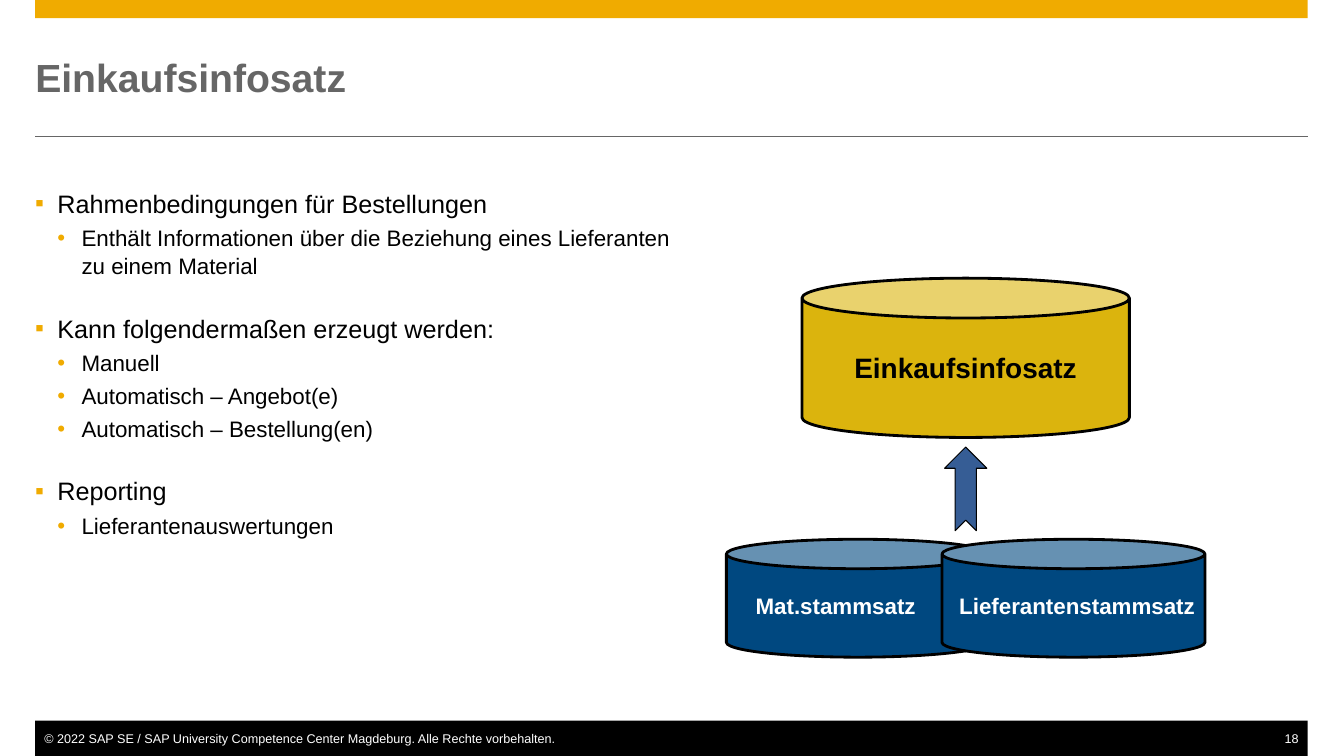
import pptx
import pptx.util
import pptx.dml.color
import pptx.enum.shapes
import pptx.enum.text
import pptx.oxml.ns
import lxml.etree

PX = 9144
GOLD = "F0AB00"
GREY = "666666"
BLUE = "004880"
KIND = pptx.enum.shapes.MSO_SHAPE
ALIGN = pptx.enum.text.PP_ALIGN
MID = pptx.enum.text.MSO_ANCHOR.MIDDLE
TOP = pptx.enum.text.MSO_ANCHOR.TOP

POINTS = [
    ("Rahmenbedingungen für Bestellungen",
     ["Enthält Informationen über die Beziehung eines Lieferanten zu einem Material"]),
    ("Kann folgendermaßen erzeugt werden:",
     ["Manuell", "Automatisch – Angebot(e)", "Automatisch – Bestellung(en)"]),
    ("Reporting", ["Lieferantenauswertungen"]),
]


def px(*nums):
    """Turn pixel lengths into a list of EMU."""
    return [pptx.util.Emu(n * PX) for n in nums]


def color(code):
    """Return the colour of a hex string."""
    return pptx.dml.color.RGBColor.from_string(code)


def child(node, tag, **attrs):
    """Append a drawing element to a node."""
    return lxml.etree.SubElement(node, pptx.oxml.ns.qn(tag), attrs)


def write(para, text, size=16, tint="000000", bold=False, align=ALIGN.LEFT):
    """Add formatted text to a paragraph."""
    para.alignment = align
    run = para.add_run()
    run.text = text
    run.font.name = "Arial"
    run.font.size = pptx.util.Pt(size)
    run.font.bold = bold
    run.font.color.rgb = color(tint)


def frame(shape, inset=(0, 0, 0, 0), anchor=TOP, wrap=True):
    """Set the insets, anchor and wrap of a shape and return its frame."""
    text = shape.text_frame
    text.margin_left, text.margin_top, text.margin_right, text.margin_bottom = px(*inset)
    text.vertical_anchor = anchor
    text.word_wrap = wrap
    return text


def block(slide, kind, box, fill, line=None, width=2):
    """Draw a filled preset shape with an optional outline."""
    shape = slide.shapes.add_shape(kind, *px(*box))
    shape.shadow.inherit = False
    shape.fill.solid()
    shape.fill.fore_color.rgb = color(fill)
    if line:
        shape.line.color.rgb = color(line)
        shape.line.width = pptx.util.Pt(width)
    else:
        shape.line.fill.background()
    return shape


def header(slide, box):
    """Place the top bar, the title and the rule below it."""
    x, y, w, h = box
    block(slide, KIND.RECTANGLE, (x, y, w, 18), GOLD)
    rule = slide.shapes.add_connector(
        pptx.enum.shapes.MSO_CONNECTOR.STRAIGHT, *px(x, y + h, x + w, y + h))
    rule.line.color.rgb = color(GREY)
    rule.line.width = pptx.util.Pt(0.5)
    child(rule._element.spPr, "a:effectLst")
    title = slide.shapes.title
    title.left, title.top, title.width, title.height = px(x, y + 35, w, 83)
    text = frame(title, anchor=MID)
    write(text.paragraphs[0], "Einkaufsinfosatz", size=28, tint=GREY, bold=True)


def footer(slide, box):
    """Place the black bar with the copyright line and page number."""
    x, y, w, h = box
    block(slide, KIND.RECTANGLE, box, "000000")
    notes = [
        (x, 522, "© 2022 SAP SE / SAP University Competence Center Magdeburg. "
         "Alle Rechte vorbehalten.", ALIGN.LEFT),
        (x + w - 25, 25, "18", ALIGN.RIGHT),
    ]
    for left, width, words, align in notes:
        note = slide.shapes.add_textbox(*px(left, y + 10, width, 15))
        inset = (9, 0, 0, 0) if align == ALIGN.LEFT else (0, 0, 9, 0)
        text = frame(note, inset=inset, wrap=False)
        write(text.paragraphs[0], words, size=9, tint="FFFFFF", align=align)


def bullet(para, mark, left, hang):
    """Give a paragraph a gold bullet and a hanging indent."""
    props = para._p.get_or_add_pPr()
    props.set("marL", str(left * PX))
    props.set("indent", str(-hang * PX))
    child(child(props, "a:buClr"), "a:srgbClr", val=GOLD)
    child(props, "a:buFont", typeface="Arial")
    child(props, "a:buChar", char=mark)


def outline(slide, box):
    """Place the two-level list of points."""
    text = frame(slide.shapes.add_textbox(*px(*box)))
    for i, (head, items) in enumerate(POINTS):
        for j, words in enumerate([head] + items):
            para = text.add_paragraph() if i or j else text.paragraphs[0]
            if j:
                para.level = 1
                bullet(para, "•", 46, 24)
            else:
                bullet(para, "▪", 22, 22)
            para.line_spacing = 1.05
            para.space_before = pptx.util.Pt(3.4 if j else 23 if i else 0)
            write(para, words, size=16 if j else 18)


def drum(slide, box, words, fill, inset=10, **style):
    """Draw a labelled cylinder."""
    can = block(slide, KIND.CAN, box, fill, line="000000")
    can.adjustments[0] = 0.25
    text = frame(can, inset=(inset, 5, 10, 5), anchor=MID, wrap=False)
    write(text.paragraphs[0], words, bold=True, **style)


def diagram(slide, box):
    """Show two master records feeding the info record."""
    x, y, w, h = box
    arrow = block(slide, KIND.NOTCHED_RIGHT_ARROW,
                  (x + w // 2 - 41, y + 188, 83, 42), "04357B", line="000000", width=0.75)
    arrow.rotation = 270
    tone = arrow._element.spPr.find(".//" + pptx.oxml.ns.qn("a:srgbClr"))
    child(tone, "a:alpha", val="80000")
    wide, tall = 261, 117
    low = y + h - tall
    drum(slide, (x, low, wide, tall), "Mat.stammsatz", BLUE, inset=29, tint="FFFFFF")
    drum(slide, (x + w - wide, low, wide, tall), "Lieferantenstammsatz", BLUE,
         tint="FFFFFF", align=ALIGN.RIGHT)
    drum(slide, (x + (w - 325) // 2, y, 325, 158), "Einkaufsinfosatz", "DBB40D",
         size=20, align=ALIGN.CENTER)


def main():
    """Build the slide and save it."""
    deck = pptx.Presentation()
    deck.slide_width, deck.slide_height = px(1334, 750)
    slide = deck.slides.add_slide(deck.slide_layouts[5])
    header(slide, (35, 0, 1263, 135))
    footer(slide, (35, 715, 1263, 35))
    outline(slide, (35, 185, 633, 480))
    diagram(slide, (721, 276, 475, 376))
    deck.save("out.pptx")


if __name__ == "__main__":
    main()
